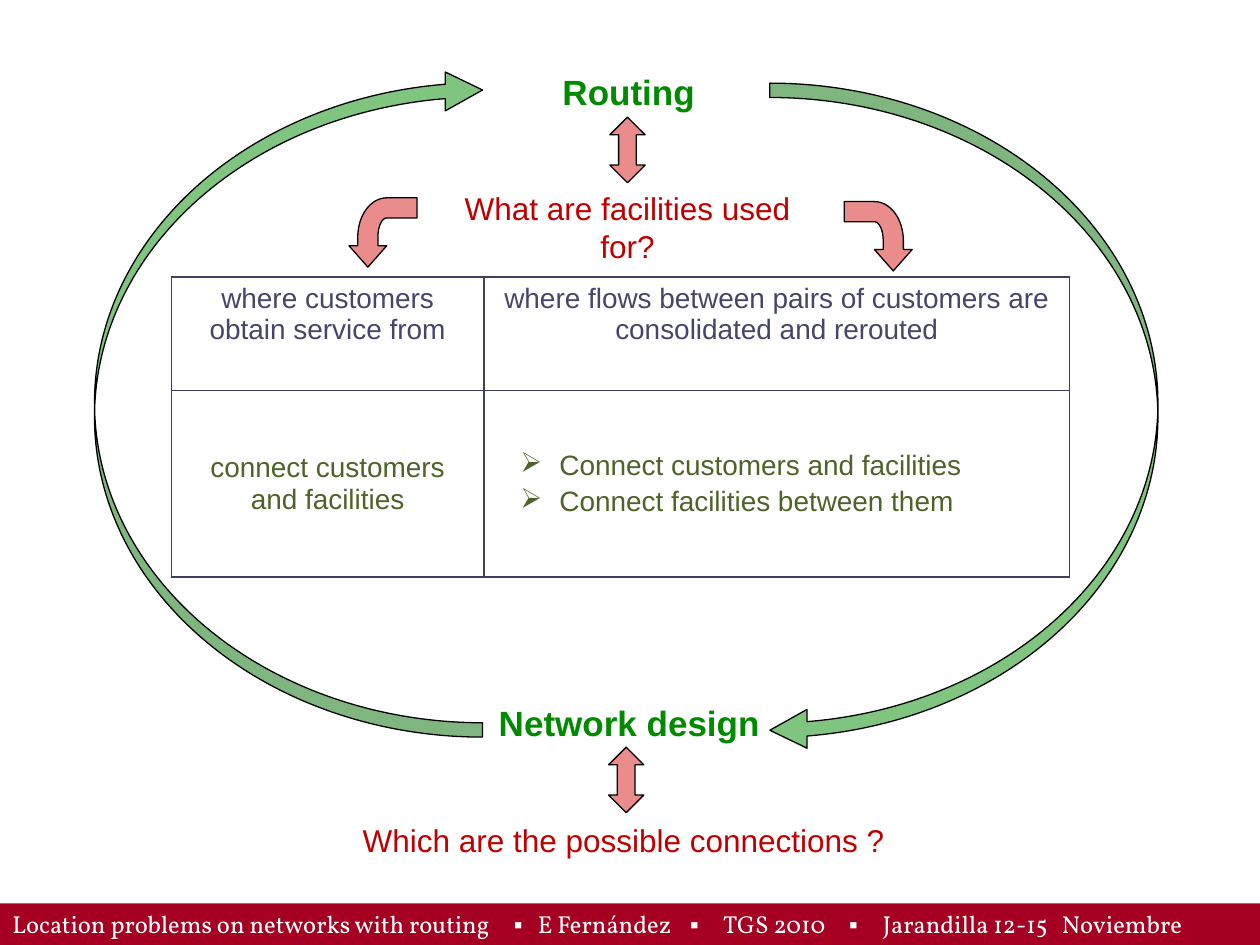
import math

import pptx
import pptx.dml.color
import pptx.enum.shapes
import pptx.enum.text
import pptx.oxml
import pptx.oxml.ns
import pptx.util
from pptx.util import Inches

COLORS = {
    "heading": "008A00",
    "question": "C00000",
    "purpose": "46466A",
    "connection": "4F6228",
    "border": "3E3E5E",
    "cycle": "008A00",
    "link": "EA8C8C",
    "outline": "000000",
    "footer": "A50021",
    "footer_text": "FFFFFF",
}
SHAPE = pptx.enum.shapes.MSO_SHAPE
ALIGN = pptx.enum.text.PP_ALIGN
ANCHOR = pptx.enum.text.MSO_ANCHOR


def color(name):
    return pptx.dml.color.RGBColor.from_string(COLORS[name])


def xml(markup):
    """Parse an element whose tag carries the a: prefix."""
    tag, rest = markup[1:].split(" ", 1)
    return pptx.oxml.parse_xml(f"<{tag} {pptx.oxml.ns.nsdecls('a')} {rest}")


def write(para, text, size=16, tint="purpose", bold=False, align=ALIGN.CENTER,
          font="Arial", symbol_font=None, before=0, bullet=None, tabs=()):
    """Fill a paragraph; symbol_font sets the separators marked ▪."""
    para.alignment = align
    para.space_before = pptx.util.Pt(before)
    properties = para._p.get_or_add_pPr()
    if bullet:
        properties.set("marL", str(Inches(0.5)))
        properties.set("indent", str(Inches(-0.31)))
        properties.append(xml(f'<a:buChar char="{bullet}"/>'))
    if tabs:
        stops = "".join(f'<a:tab pos="{Inches(stop)}" algn="l"/>' for stop in tabs)
        properties.append(xml(f"<a:tabLst >{stops}</a:tabLst>"))
    pieces = text.replace("▪", "\n▪\n").split("\n") if symbol_font else [text]
    for piece in pieces:
        span = para.add_run()
        span.text = piece
        span.font.name = symbol_font if piece == "▪" else font
        span.font.size = pptx.util.Pt(size)
        span.font.bold = bold
        span.font.color.rgb = color(tint)


def add_label(page, place, text, wrap=True, **style):
    box = page.shapes.add_textbox(*map(Inches, place))
    box.text_frame.word_wrap = wrap
    write(box.text_frame.paragraphs[0], text, **style)


def add_title(page, place, text, **style):
    box = page.shapes.title
    box.left, box.top, box.width, box.height = map(Inches, place)
    box.text_frame.vertical_anchor = ANCHOR.TOP
    box.text_frame.auto_size = pptx.enum.text.MSO_AUTO_SIZE.NONE
    write(box.text_frame.paragraphs[0], text, **style)


def paint(shape, fill, alpha=None):
    """Give a shape its fill and thin black outline."""
    shape.shadow.inherit = False
    shape.fill.solid()
    shape.fill.fore_color.rgb = color(fill)
    if alpha:
        tint = shape._element.spPr.find(".//" + pptx.oxml.ns.qn("a:srgbClr"))
        tint.append(xml(f'<a:alpha val="{alpha * 1000}"/>'))
    shape.line.color.rgb = color("outline")
    shape.line.width = pptx.util.Pt(0.75)


def add_cycle_arrow(page, left, top, rotation):
    arrow = page.shapes.add_shape(SHAPE.CURVED_LEFT_ARROW, Inches(left), Inches(top),
                                  Inches(3.08), Inches(5.29))
    for index, value in enumerate((0.037, 0.1, 0.096)):
        arrow.adjustments[index] = value
    arrow.rotation = rotation
    paint(arrow, "cycle", alpha=50)


def add_double_arrow(page, left, top):
    arrow = page.shapes.add_shape(SHAPE.UP_DOWN_ARROW, Inches(left), Inches(top),
                                  Inches(0.28), Inches(0.52))
    arrow.adjustments[0] = arrow.adjustments[1] = 0.5
    paint(arrow, "link")


def quarter(radius_x, radius_y, steps=16):
    """Points of the bend from its lower right end up to its top."""
    angles = [math.pi / 2 * step / steps for step in range(steps + 1)]
    return [(0.24 + radius_x * math.cos(a), 0.31 - radius_y * math.sin(a)) for a in angles]


def add_bent_arrow(page, start_x, top, side):
    """Arrow that leaves start_x sideways (side 1 right, -1 left) and turns down."""
    points = [(0.39, 0.55), (0.54, 0.38), (0.47, 0.38), *quarter(0.23, 0.31),
              (0, 0), (0, 0.16), *reversed(quarter(0.07, 0.15)),
              (0.31, 0.38), (0.24, 0.38)]
    corners = [(Inches(start_x + side * x), Inches(top + y)) for x, y in points]
    builder = page.shapes.build_freeform(*corners[0])
    builder.add_line_segments(corners[1:], close=True)
    paint(builder.convert_to_shape(), "link")


def format_cell(cell, anchor):
    cell.vertical_anchor = anchor
    properties = cell._tc.get_or_add_tcPr()
    for side in "LRTB":
        properties.append(xml(
            f'<a:ln{side} w="{pptx.util.Pt(1)}"><a:solidFill>'
            f'<a:srgbClr val="{COLORS["border"]}"/></a:solidFill></a:ln{side}>'))
    cell.fill.background()


def add_facility_table(page):
    table = page.shapes.add_table(2, 2, Inches(1.36), Inches(2.2),
                                  Inches(7.13), Inches(2.38)).table
    table.first_row = table.horz_banding = False
    for column, width in zip(table.columns, (2.48, 4.65)):
        column.width = Inches(width)
    for row, height in zip(table.rows, (0.9, 1.48)):
        row.height = Inches(height)

    purposes = ("where customers obtain service from",
                "where flows between pairs of customers are consolidated and rerouted")
    for index, text in enumerate(purposes):
        format_cell(table.cell(0, index), ANCHOR.TOP)
        format_cell(table.cell(1, index), ANCHOR.MIDDLE)
        write(table.cell(0, index).text_frame.paragraphs[0], text)

    write(table.cell(1, 0).text_frame.paragraphs[0],
          "connect customers and facilities", tint="connection")
    frame = table.cell(1, 1).text_frame
    bullet_style = dict(tint="connection", align=ALIGN.LEFT, bullet="➢")
    write(frame.paragraphs[0], "Connect customers and facilities", **bullet_style)
    write(frame.add_paragraph(), "Connect facilities between them", before=3, **bullet_style)


def add_footer(page):
    bar = page.shapes.add_shape(SHAPE.RECTANGLE, 0, Inches(7.17), Inches(10), Inches(0.33))
    paint(bar, "footer")
    bar.line.fill.background()
    bar.text_frame.vertical_anchor = ANCHOR.MIDDLE
    write(bar.text_frame.paragraphs[0],
          "Location problems on networks with routing\t▪\tE Fernández\t▪\tTGS 2010"
          "\t▪\tJarandilla 12-15\tNoviembre",
          size=14, tint="footer_text", align=ALIGN.LEFT, font="Vollkorn",
          symbol_font="Calibri", tabs=(3.98, 4.17, 5.38, 5.64, 6.64, 6.91, 8.33))


def main():
    deck = pptx.Presentation()
    deck.slide_width, deck.slide_height = Inches(10), Inches(7.5)
    page = deck.slides.add_slide(deck.slide_layouts[5])
    add_footer(page)
    add_facility_table(page)

    # Headings and questions
    heading = dict(size=20, tint="heading", bold=True)
    question = dict(size=18, tint="question")
    add_title(page, (4.25, 0.51, 1.48, 0.44), "Routing", **heading)
    add_label(page, (3.34, 1.45, 3.28, 0.4), "What are facilities used for?",
              wrap=False, **question)
    add_label(page, (3.86, 5.52, 2.27, 0.43), "Network design", wrap=False, **heading)
    add_label(page, (2.78, 6.47, 4.44, 0.4), "Which are the possible connections ?",
              align=ALIGN.LEFT, **question)

    # Cycle between routing and network design
    add_cycle_arrow(page, 6.11, 0.66, 0)
    add_cycle_arrow(page, 0.75, 0.56, 180)

    # Links from headings to questions and from the question to the table
    add_double_arrow(page, 4.84, 0.93)
    add_double_arrow(page, 4.83, 5.93)
    add_bent_arrow(page, 3.31, 1.57, -1)
    add_bent_arrow(page, 6.7, 1.6, 1)

    deck.save("out.pptx")


if __name__ == "__main__":
    main()
